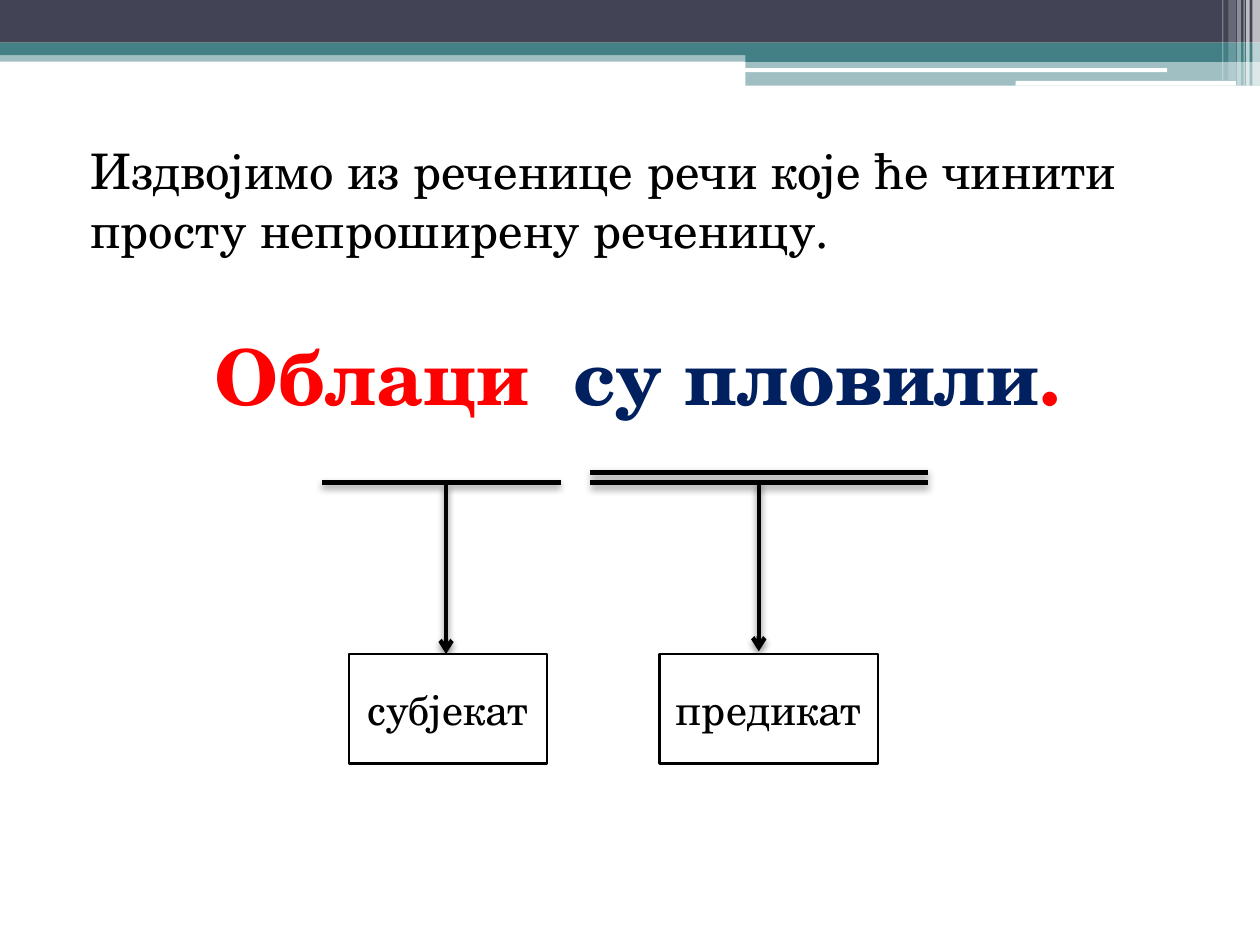
from dataclasses import dataclass

from lxml.etree import SubElement
from pptx import Presentation
from pptx.dml.color import RGBColor
from pptx.enum.shapes import MSO_CONNECTOR as Connector, MSO_SHAPE as Shape
from pptx.enum.text import MSO_ANCHOR as Anchor, PP_ALIGN as Align
from pptx.oxml.ns import qn
from pptx.util import Pt


@dataclass(frozen=True)
class Theme:
    font: str = "TeX Gyre Schola"
    black: str = "000000"
    white: str = "FFFFFF"
    slate: str = "424456"
    teal: str = "438086"
    subject: str = "FF0000"
    predicate: str = "002060"
    task_size: int = 28
    sentence_size: int = 44
    label_size: int = 24
    arrow_width: float = 2.5
    box_width: float = 1.5


def apply(target, **values):
    for name, value in values.items():
        setattr(target, name, value)


class SlideBuilder:
    def __init__(self, slide, theme):
        self.slide = slide
        self.theme = theme

    def rect(self, left, top, width, height, color, opacity=100, rounded=False):
        kind = Shape.ROUNDED_RECTANGLE if rounded else Shape.RECTANGLE
        shape = self.slide.shapes.add_shape(
            kind, Pt(left), Pt(top), Pt(width), Pt(height))
        shape.shadow.inherit = False
        shape.fill.solid()
        shape.fill.fore_color.rgb = RGBColor.from_string(color)
        shape.line.fill.background()
        if opacity < 100:
            fill_color = shape.fill._xPr.find(qn("a:solidFill"))[0]
            SubElement(fill_color, qn("a:alpha"), val=str(opacity * 1000))
        return shape

    def run(self, paragraph, text, size, color, bold=False):
        run = paragraph.add_run()
        run.text = text
        apply(run.font, name=self.theme.font, size=Pt(size), bold=bold)
        run.font.color.rgb = RGBColor.from_string(color)
        return run

    def label_box(self, left, top, width, height, text):
        theme = self.theme
        box = self.rect(left, top, width, height, theme.white)
        box.line.color.rgb = RGBColor.from_string(theme.black)
        box.line.width = Pt(theme.box_width)
        apply(box.text_frame, word_wrap=True, vertical_anchor=Anchor.MIDDLE)
        paragraph = box.text_frame.paragraphs[0]
        paragraph.alignment = Align.CENTER
        self.run(paragraph, text, theme.label_size, theme.black)

    def line(self, x1, y1, x2, y2, arrow=False):
        """Draw a black line with a soft shadow below it."""
        theme = self.theme
        line = self.slide.shapes.add_connector(
            Connector.STRAIGHT, Pt(x1), Pt(y1), Pt(x2), Pt(y2))
        line.line.color.rgb = RGBColor.from_string(theme.black)
        line.line.width = Pt(theme.arrow_width)
        properties = line._element.spPr
        if arrow:
            SubElement(properties.find(qn("a:ln")), qn("a:tailEnd"), type="arrow")
        effects = SubElement(properties, qn("a:effectLst"))
        shadow = SubElement(effects, qn("a:outerShdw"), blurRad=str(Pt(4)),
                            dist=str(Pt(2)), dir="5400000", rotWithShape="0")
        shade = SubElement(shadow, qn("a:srgbClr"), val=theme.black)
        SubElement(shade, qn("a:alpha"), val="45000")

    def body(self, left, top, width, height, paragraphs):
        """Add paragraphs given as (alignment, space before, runs)."""
        frame = self.slide.shapes.add_textbox(
            Pt(left), Pt(top), Pt(width), Pt(height)).text_frame
        frame.word_wrap = True
        for index, (alignment, space, runs) in enumerate(paragraphs):
            paragraph = frame.add_paragraph() if index else frame.paragraphs[0]
            apply(paragraph, alignment=alignment, space_before=Pt(space))
            paragraph._p.get_or_add_pPr().set("marL", str(Pt(8.64)))
            for text, size, color, bold, tracking in runs:
                run = self.run(paragraph, text, size, color, bold)
                if tracking:
                    run.font._element.set("spc", str(round(tracking * 100)))


def draw_header(builder):
    theme = builder.theme
    for band in (
        (0, 28.8, 720, 6.5, theme.teal, 50),
        (0, 0, 720, 24.4, theme.slate),
        (0, 24.4, 720, 7.2, theme.teal),
        (426, 28.2, 294, 7.2, theme.teal),
        (426, 34.9, 294, 14.1, theme.teal, 50),
        (425.7, 39, 241.2, 2.2, theme.white, 100, True),
        (580.3, 46.2, 126, 2.7, theme.white, 100, True),
    ):
        builder.rect(*band)
    for left, width, height, opacity in (
        (715.7, 4.3, 49, 65), (712.1, 2.1, 49, 65), (710.6, 0.7, 49, 60),
        (707, 2.1, 49, 40), (702, 4.3, 46, 20), (698.4, 0.7, 46, 30),
    ):
        builder.rect(left, 0, width, height, theme.white, opacity)


def draw_sentence(builder):
    theme = builder.theme
    task = "Издвојимо из реченице речи које ће чинити просту непроширену реченицу."
    size = theme.sentence_size
    builder.body(36, 77, 648, 440.6, (
        (Align.LEFT, 3, ((task, theme.task_size, theme.black, False, 0),)),
        (Align.CENTER, 40, (
            ("Облаци", size, theme.subject, True, 0),
            (" ", size, theme.subject, True, 12.2),
            ("су пловили", size, theme.predicate, True, 0),
            (".", size, theme.subject, True, 0),
        )),
    ))


def draw_analysis(builder):
    """Underline the subject once and the predicate twice, and name them."""
    underline, upper_underline, box_top = 275.8, 270, 373.7
    for x, start, end, box_left, box_width, label in (
        (254.9, 277.2, 373.7, 199.4, 113.3, "субјекат"),
        (433.6, 275.8, 372.2, 376.9, 124.9, "предикат"),
    ):
        builder.line(x, start, x, end, arrow=True)
        builder.label_box(box_left, box_top, box_width, 62.6, label)
    for left, right, y in (
        (184.1, 320.4, underline),
        (337.4, 530.2, upper_underline),
        (337.4, 530.2, underline),
    ):
        builder.line(left, y, right, y)


def main():
    deck = Presentation()
    apply(deck, slide_width=Pt(720), slide_height=Pt(540))
    builder = SlideBuilder(deck.slides.add_slide(deck.slide_layouts[6]), Theme())
    draw_header(builder)
    draw_sentence(builder)
    draw_analysis(builder)
    deck.save("out.pptx")


if __name__ == "__main__":
    main()
